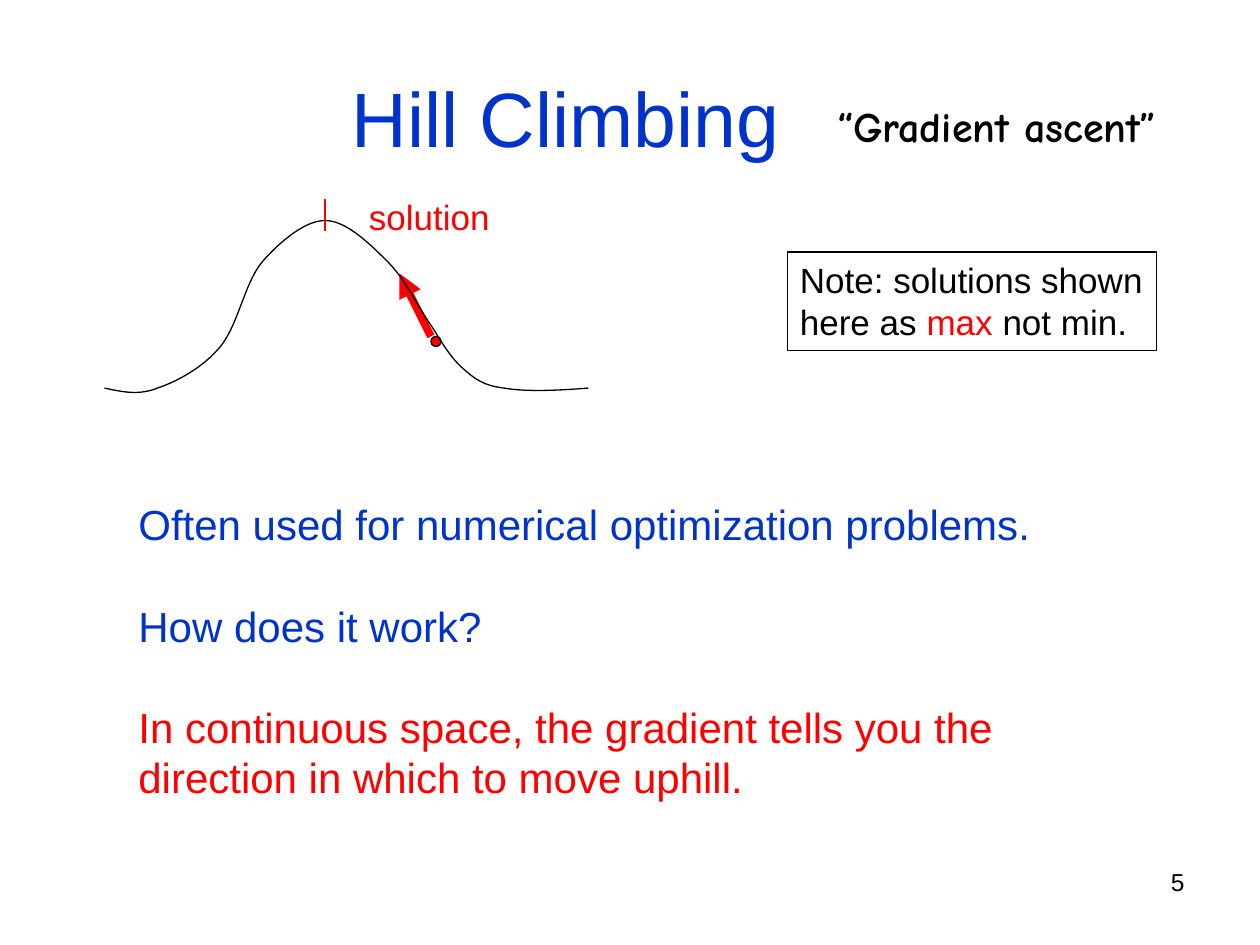
from pptx import Presentation
from pptx.util import Inches, Pt
from pptx.dml.color import RGBColor
from pptx.enum.shapes import MSO_CONNECTOR as Link, MSO_SHAPE as Shape
from pptx.enum.text import MSO_ANCHOR as Anchor, MSO_AUTO_SIZE as AutoSize, PP_ALIGN as Align
from pptx.oxml.ns import qn
from lxml.etree import SubElement

COLORS = {"blue": "0033CC", "red": "FF0000", "black": "000000"}


def rgb(name):
    return RGBColor.from_string(COLORS[name])


class SlideBuilder:
    font = "Arial"
    hairline = 0.75

    def __init__(self, slide):
        self.slide = slide
        self.shapes = slide.shapes

    def outline(self, shape, color="black", width=hairline):
        shape.line.color.rgb = rgb(color)
        shape.line.width = Pt(width)

    def text(self, box, paragraphs, size, align=Align.LEFT, anchor=Anchor.TOP,
             font=font, bold=False, wrap=False, border=False):
        label = self.shapes.add_textbox(*map(Inches, box))
        frame = label.text_frame
        frame.word_wrap = wrap
        frame.auto_size = AutoSize.NONE
        frame.vertical_anchor = anchor
        if border:
            self.outline(label)
        for index, (runs, gap) in enumerate(paragraphs):
            paragraph = frame.paragraphs[0] if index == 0 else frame.add_paragraph()
            paragraph.alignment = align
            paragraph.space_before = Pt(gap)
            for words, color in runs:
                run = paragraph.add_run()
                run.text = words
                run.font.name = font
                run.font.size = Pt(size)
                run.font.bold = bold
                run.font.color.rgb = rgb(color)

    def line(self, start, end, color, width=hairline, arrow=False):
        link = self.shapes.add_connector(Link.STRAIGHT, *map(Inches, start + end))
        self.outline(link, color, width)
        properties = link._element.spPr
        if arrow:
            SubElement(properties.find(qn("a:ln")), qn("a:tailEnd"), type="triangle")
        SubElement(properties, qn("a:effectLst"))

    def dot(self, box, color):
        marker = self.shapes.add_shape(Shape.OVAL, *map(Inches, box))
        marker.shadow.inherit = False
        marker.fill.solid()
        marker.fill.fore_color.rgb = rgb(color)
        self.outline(marker)

    def curve(self, start, controls):
        builder = self.shapes.build_freeform(*map(Inches, start))
        builder.add_line_segments([(Inches(x), Inches(y)) for x, y in controls], close=False)
        hill = builder.convert_to_shape()
        hill.shadow.inherit = False
        hill.fill.background()
        self.outline(hill)
        outline = hill._element.find(".//" + qn("a:path"))
        for index, corner in enumerate(outline.findall(qn("a:lnTo"))):
            if index % 3 == 0:
                cubic = SubElement(outline, qn("a:cubicBezTo"))
            cubic.append(corner[0])
            outline.remove(corner)


def main():
    deck = Presentation()
    deck.slide_width, deck.slide_height = Inches(10), Inches(7.5)
    page = SlideBuilder(deck.slides.add_slide(deck.slide_layouts[6]))

    page.text((7.17, 6.83, 2.33, 0.52), [([("5", "black")], 0)], 14,
              align=Align.RIGHT, wrap=True)
    page.text((0.5, 0.3, 7.98, 1.25), [([("Hill Climbing", "blue")], 0)], 44,
              align=Align.CENTER, anchor=Anchor.MIDDLE, wrap=True)
    page.text((6.55, 0.75, 3.05, 0.5), [([("“Gradient ascent”", "black")], 0)], 24,
              font="Comic Neue", bold=True)

    page.dot((3.42, 2.67, 0.08, 0.08), "red")
    page.line((3.42, 2.67), (3.17, 2.17), "red", width=4.5, arrow=True)
    page.curve((0.83, 3.08), [
        (0.97, 3.11), (1.1, 3.14), (1.25, 3.08),
        (1.4, 3.03), (1.61, 2.92), (1.75, 2.75),
        (1.89, 2.58), (1.94, 2.25), (2.08, 2.08),
        (2.22, 1.92), (2.42, 1.75), (2.58, 1.75),
        (2.75, 1.75), (2.94, 1.94), (3.08, 2.08),
        (3.22, 2.22), (3.32, 2.44), (3.42, 2.58),
        (3.51, 2.72), (3.57, 2.83), (3.67, 2.92),
        (3.76, 3), (3.83, 3.06), (4, 3.08),
        (4.17, 3.11), (4.42, 3.1), (4.67, 3.08),
    ])
    page.text((2.83, 1.5, 1.16, 0.43), [([("solution", "red")], 0)], 20)
    page.line((2.58, 1.58), (2.58, 1.83), "red")

    page.text((6.25, 2, 2.93, 0.78), [
        ([("Note: solutions shown", "black")], 0),
        ([("here as ", "black"), ("max", "red"), (" not min.", "black")], 0),
    ], 20, border=True)
    page.text((1, 3.91, 7.35, 2.52), [
        ([("Often used for numerical optimization problems.", "blue")], 0),
        ([("How does it work?", "blue")], 29),
        ([("In continuous space, the gradient tells you the", "red")], 29),
        ([("direction in which to move uphill.", "red")], 0),
    ], 24)

    deck.save("out.pptx")


if __name__ == "__main__":
    main()
